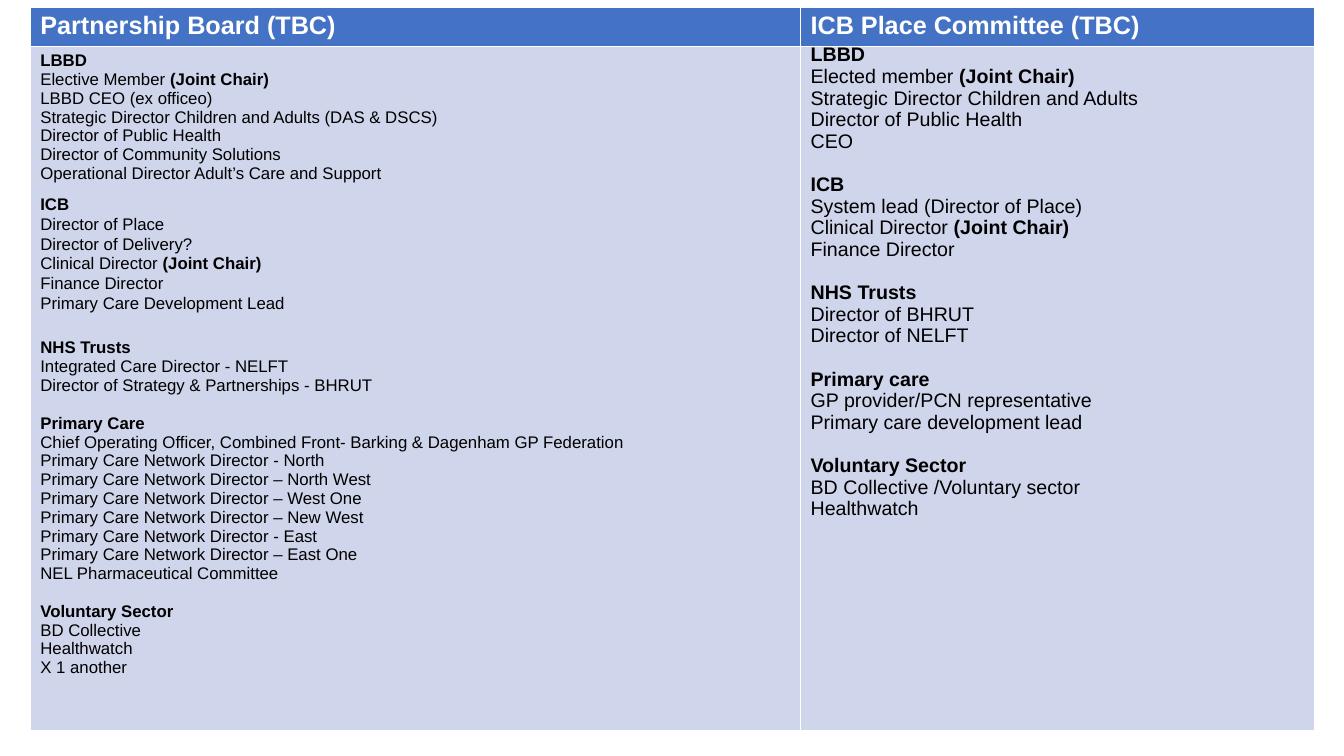
from dataclasses import dataclass

from pptx import Presentation
from pptx.dml.color import RGBColor
from pptx.util import Emu, Pt

EMU_PER_PX = 9144  # 100 px to the inch
FONT = "Arial"
WHITE, BLACK, HEADER_BLUE, BODY_BLUE = "FFFFFF", "000000", "4472C4", "CFD5EA"
CHAIR = "(Joint Chair)"


@dataclass
class Group:
    heading: str
    members: list[str]
    compact: bool = True  # reduced line height with space after each line


@dataclass
class Column:
    title: str
    width: int
    size: int
    gap: float  # points between groups
    groups: list[Group]


COLUMNS = [
    Column("Partnership Board (TBC)", 764, 12, 13.4, [
        Group("LBBD", [
            "Elective Member (Joint Chair)",
            "LBBD CEO (ex officeo)",
            "Strategic Director Children and Adults (DAS & DSCS)",
            "Director of Public Health",
            "Director of Community Solutions",
            "Operational Director Adult’s Care and Support",
        ], compact=False),
        Group("ICB", [
            "Director of Place",
            "Director of Delivery?",
            "Clinical Director (Joint Chair)",
            "Finance Director",
            "Primary Care Development Lead",
        ]),
        Group("NHS Trusts", [
            "Integrated Care Director - NELFT",
            "Director of Strategy & Partnerships - BHRUT",
        ], compact=False),
        Group("Primary Care", [
            "Chief Operating Officer, Combined Front- Barking & Dagenham GP Federation",
            "Primary Care Network Director - North",
            "Primary Care Network Director – North West",
            "Primary Care Network Director – West One",
            "Primary Care Network Director – New West",
            "Primary Care Network Director - East",
            "Primary Care Network Director – East One",
            "NEL Pharmaceutical Committee",
        ], compact=False),
        Group("Voluntary Sector", [
            "BD Collective",
            "Healthwatch",
            "X 1 another",
        ], compact=False),
    ]),
    Column("ICB Place Committee (TBC)", 510, 14, 15.4, [
        Group("LBBD", [
            "Elected member (Joint Chair)",
            "Strategic Director Children and Adults",
            "Director of Public Health",
            "CEO",
        ]),
        Group("ICB", [
            "System lead (Director of Place)",
            "Clinical Director (Joint Chair)",
            "Finance Director",
        ]),
        Group("NHS Trusts", ["Director of BHRUT", "Director of NELFT"]),
        Group("Primary care", [
            "GP provider/PCN representative",
            "Primary care development lead",
        ]),
        Group("Voluntary Sector", [
            "BD Collective /Voluntary sector",
            "Healthwatch",
        ]),
    ]),
]


def px(length: int) -> Emu:
    return Emu(length * EMU_PER_PX)


def color(value: str) -> RGBColor:
    return RGBColor.from_string(value)


def fill_cell(cell, value: str) -> None:
    cell.fill.solid()
    cell.fill.fore_color.rgb = color(value)


def add_span(para, text: str, size: int, bold: bool, value: str) -> None:
    span = para.add_run()
    span.text = text
    span.font.name = FONT
    span.font.size = Pt(size)
    span.font.bold = bold
    span.font.color.rgb = color(value)


def write_header(cell, column: Column) -> None:
    fill_cell(cell, HEADER_BLUE)
    add_span(cell.text_frame.paragraphs[0], column.title, 18, True, WHITE)


def write_members(cell, column: Column) -> None:
    fill_cell(cell, BODY_BLUE)
    frame = cell.text_frame
    for group_index, group in enumerate(column.groups):
        for line_index, line in enumerate([group.heading, *group.members]):
            is_heading = line_index == 0
            is_first = is_heading and group_index == 0
            para = frame.paragraphs[0] if is_first else frame.add_paragraph()
            if is_heading and not is_first:
                para.space_before = Pt(column.gap)
            if group.compact:
                para.line_spacing = 0.6
                para.space_after = Pt(6)
            role, chair, _ = line.partition(CHAIR)
            add_span(para, role, column.size, is_heading, BLACK)
            if chair:
                add_span(para, chair, column.size, True, BLACK)


def main() -> None:
    deck = Presentation()
    deck.slide_width, deck.slide_height = px(1333), px(750)
    page = deck.slides.add_slide(deck.slide_layouts[6])

    # Membership table; its default style draws the white borders
    width = sum(column.width for column in COLUMNS)
    frame = page.shapes.add_table(2, len(COLUMNS), px(30), px(7), px(width), px(718))
    table = frame.table
    table.rows[0].height, table.rows[1].height = px(39), px(679)
    for index, column in enumerate(COLUMNS):
        table.columns[index].width = px(column.width)
        write_header(table.cell(0, index), column)
        write_members(table.cell(1, index), column)

    deck.save("out.pptx")


if __name__ == "__main__":
    main()
